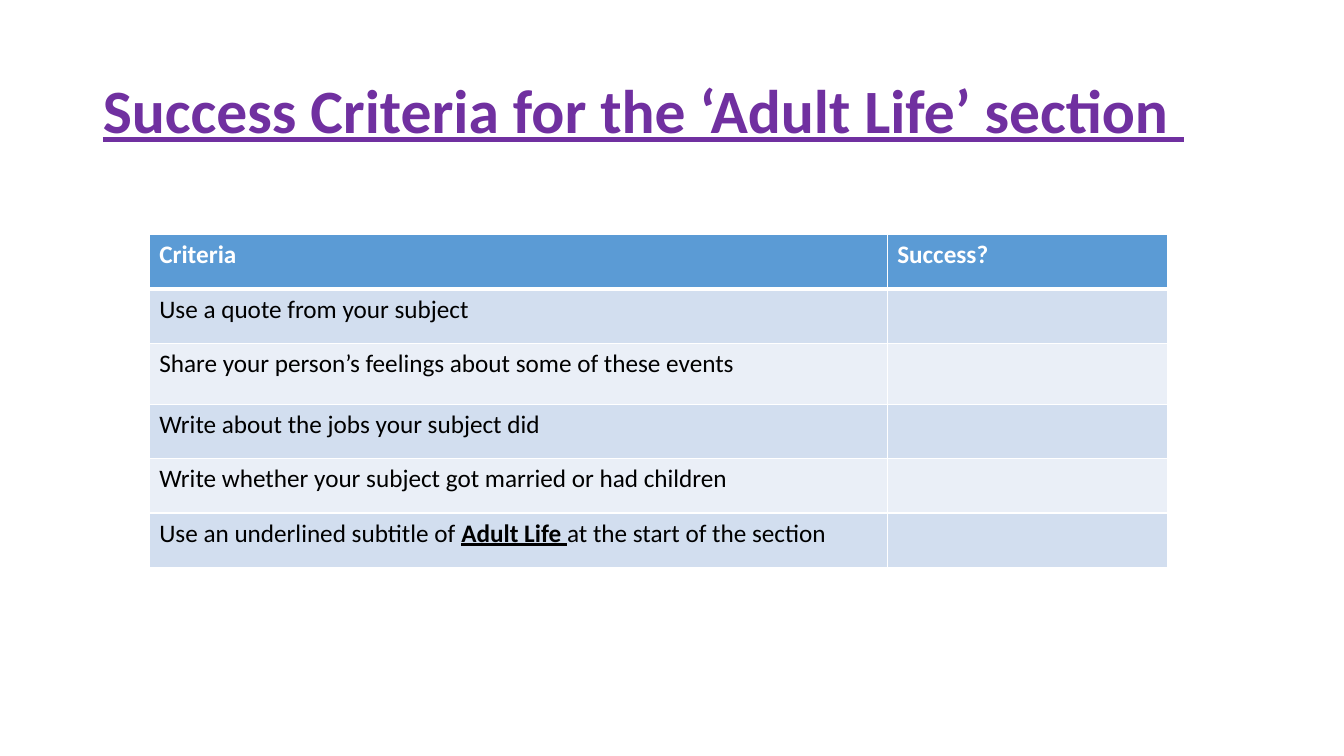
import pptx
import pptx.dml.color
import pptx.enum.text
import pptx.oxml
import pptx.oxml.ns
import pptx.util
from pptx.util import Inches

CRITERIA = [
    ["Use a quote from your subject"],
    ["Share your person’s feelings about some of these events"],
    ["Write about the jobs your subject did"],
    ["Write whether your subject got married or had children"],
    ["Use an underlined subtitle of ", ("Adult Life ", {"bold": True, "underline": True}),
     "at the start of the section"],
]


def colour(hex_string):
    return pptx.dml.color.RGBColor.from_string(hex_string)


def add_text(paragraph, text, size=18, color="000000", bold=False, underline=False):
    run = paragraph.add_run()
    run.text = text
    font = run.font
    font.name = "Calibri"
    font.size = pptx.util.Pt(size)
    font.bold = bold
    font.underline = underline
    font.color.rgb = colour(color)


def set_borders(cell, widths):
    """Draw white borders; widths are points for left, right, top and bottom."""
    properties = cell._tc.get_or_add_tcPr()
    for index, (side, width) in enumerate(zip("LRTB", widths)):
        line = pptx.oxml.parse_xml(
            f'<a:ln{side} {pptx.oxml.ns.nsdecls("a")} w="{pptx.util.Pt(width)}">'
            '<a:solidFill><a:srgbClr val="FFFFFF"/></a:solidFill>'
            f'</a:ln{side}>')
        properties.insert(index, line)


class CriteriaSlide:
    title_color = "7030A0"
    header_fill = "5B9BD5"
    band_fills = ("EAEFF7", "D2DEEF")

    def __init__(self, presentation):
        self.slide = presentation.slides.add_slide(presentation.slide_layouts[5])

    def add_title(self, text):
        title = self.slide.shapes.title
        title.left, title.top = Inches(0.92), Inches(0.4)
        title.width, title.height = Inches(11.5), Inches(1.45)
        title.text_frame.vertical_anchor = pptx.enum.text.MSO_ANCHOR.MIDDLE
        paragraph = title.text_frame.paragraphs[0]
        paragraph.alignment = pptx.enum.text.PP_ALIGN.LEFT
        paragraph.line_spacing = 0.9
        add_text(paragraph, text, size=44, color=self.title_color, bold=True, underline=True)

    def add_table(self, headings, criteria):
        row_heights = [0.54, 0.54, 0.6, 0.54, 0.54, 0.54]
        column_widths = [7.32, 2.78]
        table = self.slide.shapes.add_table(
            len(row_heights), len(column_widths), Inches(1.48), Inches(2.33),
            Inches(sum(column_widths)), Inches(sum(row_heights))).table
        for column, width in zip(table.columns, column_widths):
            column.width = Inches(width)
        for index, (row, height) in enumerate(zip(table.rows, row_heights)):
            row.height = Inches(height)
            for cell in row.cells:
                cell.fill.solid()
                cell.fill.fore_color.rgb = colour(
                    self.band_fills[index % 2] if index else self.header_fill)
                set_borders(cell, (1, 1, 3 if index == 1 else 1, 3 if index == 0 else 1))
        for cell, heading in zip(table.rows[0].cells, headings):
            add_text(cell.text_frame.paragraphs[0], heading, color="FFFFFF", bold=True)
        for index, pieces in enumerate(criteria, start=1):
            paragraph = table.cell(index, 0).text_frame.paragraphs[0]
            for piece in pieces:
                text, style = (piece, {}) if isinstance(piece, str) else piece
                add_text(paragraph, text, **style)


def main():
    presentation = pptx.Presentation()
    presentation.slide_width = Inches(13.33)
    presentation.slide_height = Inches(7.5)
    criteria_slide = CriteriaSlide(presentation)
    criteria_slide.add_title("Success Criteria for the ‘Adult Life’ section ")
    criteria_slide.add_table(["Criteria", "Success?"], CRITERIA)
    presentation.save("out.pptx")


if __name__ == "__main__":
    main()
